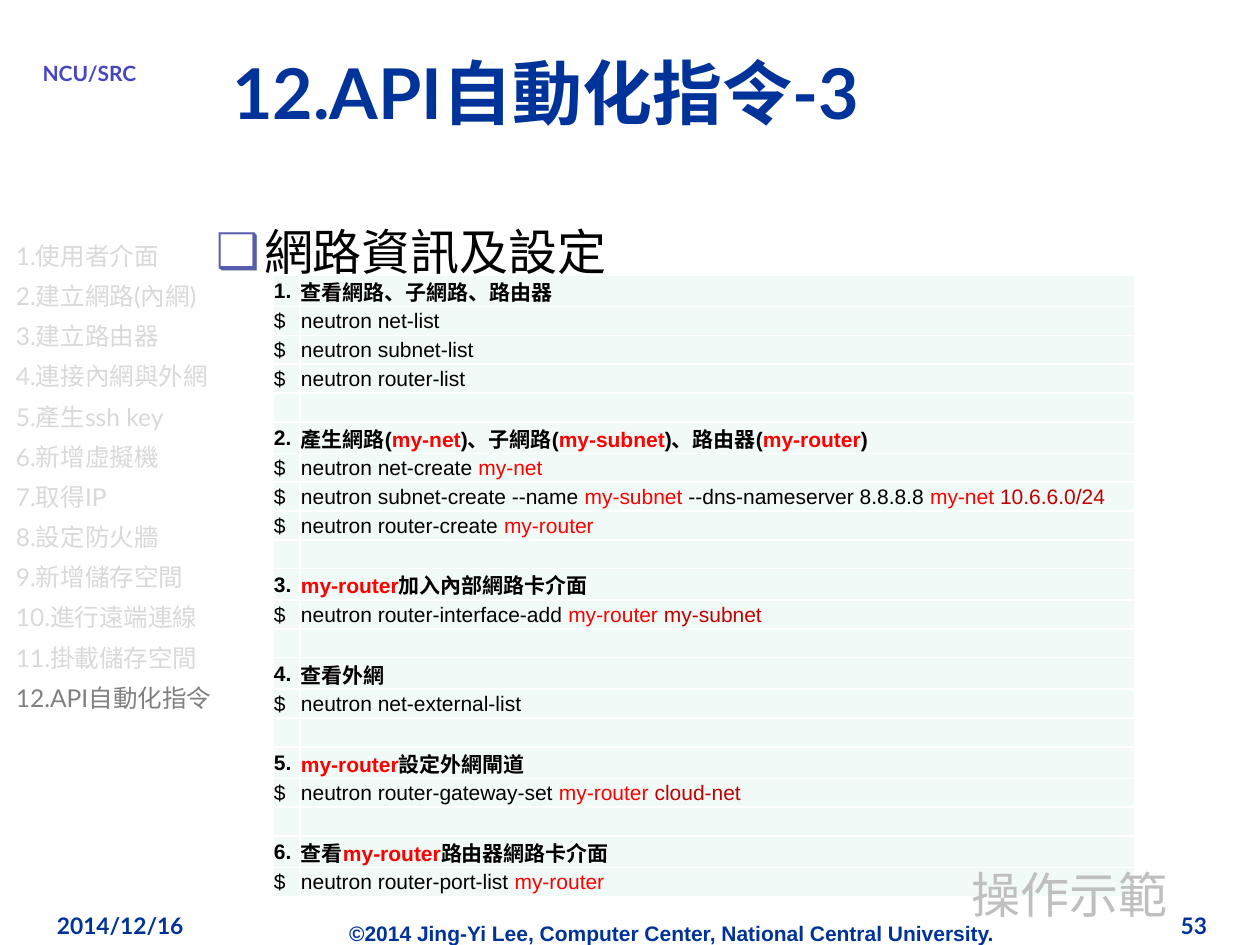
from lxml import etree
from pptx import Presentation
from pptx.dml.color import RGBColor
from pptx.enum.text import MSO_ANCHOR, MSO_AUTO_SIZE, PP_ALIGN
from pptx.oxml.ns import qn
from pptx.util import Pt

LEFT, CENTER, RIGHT = PP_ALIGN.LEFT, PP_ALIGN.CENTER, PP_ALIGN.RIGHT
TOP, MIDDLE = MSO_ANCHOR.TOP, MSO_ANCHOR.MIDDLE
NO_FIT = MSO_AUTO_SIZE.NONE

BLACK, WHITE, NAVY = "000000", "FFFFFF", "003399"
RED, DARK_RED = "FF0000", "C00000"
FADED, CURRENT, MINT = "D9D9D9", "808080", "F1FAF6"

TOPICS = [
    "1.使用者介面", "2.建立網路(內網)", "3.建立路由器", "4.連接內網與外網",
    "5.產生ssh key", "6.新增虛擬機", "7.取得IP", "8.設定防火牆",
    "9.新增儲存空間", "10.進行遠端連線", "11.掛載儲存空間", "12.API自動化指令",
]
NET, SUBNET, ROUTER = ("my-net", RED), ("my-subnet", RED), ("my-router", RED)
STEPS = [
    (["查看網路、子網路、路由器"],
     ["neutron net-list"], ["neutron subnet-list"], ["neutron router-list"]),
    (["產生網路(", NET, ")、子網路(", SUBNET, ")、路由器(", ROUTER, ")"],
     ["neutron net-create ", NET],
     ["neutron subnet-create --name ", SUBNET, " --dns-nameserver 8.8.8.8 ",
      ("my-net ", RED), ("10.6.6.0/24", DARK_RED)],
     ["neutron router-create ", ROUTER]),
    ([ROUTER, "加入內部網路卡介面"],
     ["neutron router-interface-add ", ("my-router ", RED), ("my-subnet", DARK_RED)]),
    (["查看外網"], ["neutron net-external-list"]),
    ([ROUTER, "設定外網閘道"],
     ["neutron router-gateway-set ", ("my-router ", RED), ("cloud-net", DARK_RED)]),
    (["查看", ROUTER, "路由器網路卡介面"], ["neutron router-port-list ", ROUTER]),
]


def px(n):
    """Turn pixels into EMU."""
    return round(n * 914400 / 126)


def rgb(value):
    """Turn a hex string into a colour."""
    return RGBColor.from_string(value)


def style(p, size, color, font="Lato", bold=False):
    """Format every run of a paragraph."""
    for r in p.runs:
        r.font.size = Pt(size)
        r.font.name = font
        r.font.bold = bold
        r.font.color.rgb = rgb(color)


def place(sp, box):
    """Move a shape to a pixel box."""
    sp.left, sp.top, sp.width, sp.height = map(px, box)


def frame(sp, anchor=TOP, wrap=True):
    """Set up the text frame of a shape and return it."""
    tf = sp.text_frame
    tf.word_wrap = wrap
    tf.auto_size = NO_FIT
    tf.vertical_anchor = anchor
    tf.margin_left = tf.margin_right = px(13)
    tf.margin_top = tf.margin_bottom = px(6)
    return tf


def add_label(slide, box, text, size, color, font="Lato", align=LEFT, wrap=True):
    """Add one line of bold text."""
    tf = frame(slide.shapes.add_textbox(*map(px, box)), wrap=wrap)
    tf.text = text
    p = tf.paragraphs[0]
    p.alignment = align
    style(p, size, color, font, True)


def add_topics(slide, box):
    """Add the list of topics with the last one as current."""
    tf = frame(slide.shapes.add_textbox(*map(px, box)))
    tf.text = "\n".join(TOPICS)
    for i, p in enumerate(tf.paragraphs):
        p.line_spacing = 1.2
        p.space_before = Pt(2.8 if i else 0)
        style(p, 14, CURRENT if p.text == TOPICS[-1] else FADED)


def set_bullet(p, margin, indent, char=None, color=None):
    """Set the indents and the bullet of a paragraph."""
    pPr = p._p.get_or_add_pPr()
    pPr.set("marL", str(px(margin)))
    pPr.set("indent", str(px(indent)))
    if char:
        clr = etree.SubElement(pPr, qn("a:buClr"))
        etree.SubElement(clr, qn("a:srgbClr")).set("val", color)
        etree.SubElement(pPr, qn("a:buChar")).set("char", char)
    else:
        etree.SubElement(pPr, qn("a:buNone"))


def fill_title(sp, box):
    """Write the slide title."""
    place(sp, box)
    tf = frame(sp, MIDDLE)
    tf.text = "12.API自動化指令-3"
    tf.paragraphs[0].alignment = LEFT
    style(tf.paragraphs[0], 40, NAVY, bold=True)


def fill_body(sp, box):
    """Write the heading and the closing remark."""
    place(sp, box)
    tf = frame(sp)
    tf.text = "網路資訊及設定\n操作示範"
    heading, remark = tf.paragraphs
    set_bullet(heading, 48, -48, "❑", "555DAB")
    set_bullet(remark, 756, 0)
    for p, gap, color in ((heading, 0, BLACK), (remark, 327, "BFBFBF")):
        p.line_spacing = 1.2
        p.space_before = Pt(gap)
        style(p, 28, color)


def fill_cell(cell, parts, bold):
    """Write coloured parts into a cell with white borders."""
    cell.margin_left = cell.margin_right = cell.margin_top = px(1)
    cell.margin_bottom = 0
    cell.vertical_anchor = MIDDLE
    cell.fill.solid()
    cell.fill.fore_color.rgb = rgb(MINT)
    tcPr = cell._tc.get_or_add_tcPr()
    for i, side in enumerate("LRTB"):
        ln = etree.Element(qn("a:ln" + side), w=str(Pt(1)))
        fill = etree.SubElement(ln, qn("a:solidFill"))
        etree.SubElement(fill, qn("a:srgbClr")).set("val", WHITE)
        tcPr.insert(i, ln)
    p = cell.text_frame.paragraphs[0]
    for part in parts:
        text, color = (part, BLACK) if isinstance(part, str) else part
        r = p.add_run()
        r.text = text
        r.font.size = Pt(12)
        r.font.name = "Arial"
        r.font.bold = bold
        r.font.color.rgb = rgb(color)
    if not parts:
        p._p.get_or_add_endParaRPr().set("sz", "1200")


def add_commands(slide, box):
    """Add the table of numbered steps and their commands."""
    rows = []
    for n, (heading, *commands) in enumerate(STEPS, 1):
        if rows:
            rows.append(([], [], False))
        rows.append(([f"{n}."], heading, True))
        rows += [(["$"], command, False) for command in commands]
    table = slide.shapes.add_table(len(rows), 2, *map(px, box)).table
    table.first_row = table.horz_banding = False
    table.columns[0].width = px(27)
    table.columns[1].width = px(box[2] - 27)
    for i, (mark, parts, bold) in enumerate(rows):
        table.rows[i].height = px(box[3]) // len(rows)
        fill_cell(table.cell(i, 0), mark, bold)
        fill_cell(table.cell(i, 1), parts, bold)


def main():
    """Build the slide and save it."""
    prs = Presentation()
    prs.slide_width, prs.slide_height = px(1260), px(945)
    slide = prs.slides.add_slide(prs.slide_layouts[1])
    title, body = slide.placeholders
    add_label(slide, (217, 915, 910, 38),
              "©2014 Jing-Yi Lee, Computer Center, National Central University.",
              12, NAVY, "Arial", CENTER)
    add_label(slide, (44, 55, 91, 30), "NCU/SRC", 12, "4646C2", align=CENTER, wrap=False)
    add_topics(slide, (3, 229, 1071, 660))
    add_commands(slide, (273, 275, 862, 606))
    fill_title(title, (219, 35, 1041, 113))
    fill_body(body, (203, 204, 1032, 735))
    for sp in (title, body):
        slide.shapes.element.append(sp.element)
    add_label(slide, (44, 906, 262, 63), "2014/12/16", 13, NAVY)
    add_label(slide, (958, 906, 262, 63), "53", 13, NAVY, align=RIGHT)
    prs.save("out.pptx")


if __name__ == "__main__":
    main()
